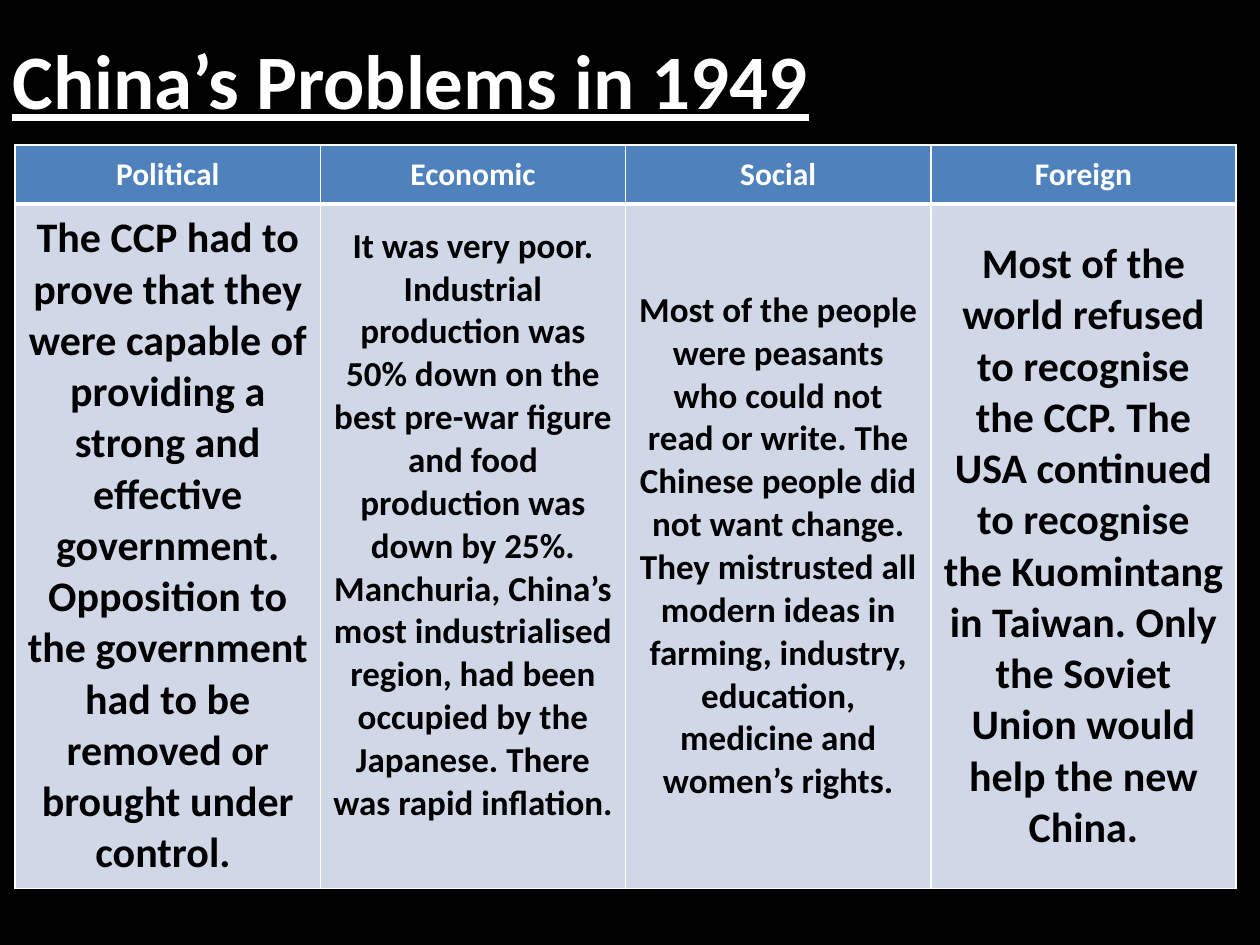
from lxml import etree
from pptx import Presentation
from pptx.dml.color import RGBColor
from pptx.enum.text import MSO_ANCHOR, PP_ALIGN
from pptx.oxml.ns import qn
from pptx.util import Inches, Pt


def color(value):
    return RGBColor.from_string(value)


def format_text(text_frame, size, font_color, alignment):
    paragraph = text_frame.paragraphs[0]
    paragraph.alignment = alignment
    font = paragraph.runs[0].font
    font.name = "Calibri"
    font.size = Pt(size)
    font.bold = True
    font.color.rgb = color(font_color)
    return font


presentation = Presentation()
presentation.slide_width = Inches(10)
presentation.slide_height = Inches(7.5)
slide = presentation.slides.add_slide(presentation.slide_layouts[6])
slide.background.fill.solid()
slide.background.fill.fore_color.rgb = color("000000")

title = slide.shapes.add_textbox(Inches(0), Inches(0), Inches(9.02), Inches(1.25))
title.text_frame.word_wrap = True
title.text_frame.vertical_anchor = MSO_ANCHOR.MIDDLE
title.text_frame.text = "China’s Problems in 1949"
format_text(title.text_frame, 44, "FFFFFF", PP_ALIGN.LEFT).underline = True

problems = [
    ("Political", 24, 0.05,
     "The CCP had to prove that they were capable of providing a strong and "
     "effective government. Opposition to the government had to be removed or "
     "brought under control. "),
    ("Economic", 20, 0.39,
     "It was very poor. Industrial production was 50% down on the best pre-war "
     "figure and food production was down by 25%. Manchuria, China’s most "
     "industrialised region, had been occupied by the Japanese. There was rapid "
     "inflation. "),
    ("Social", 20, 0.05,
     "Most of the people were peasants who could not read or write. The Chinese "
     "people did not want change. They mistrusted all modern ideas in farming, "
     "industry, education, medicine and women’s rights."),
    ("Foreign", 24, 0.05,
     "Most of the world refused to recognise the CCP. The USA continued to "
     "recognise the Kuomintang in Taiwan. Only the Soviet Union would help the "
     "new China."),
]

table_width = Inches(9.69)
table = slide.shapes.add_table(
    2, len(problems), Inches(0.12), Inches(1.15), table_width, Inches(5.9)
).table
table.rows[0].height = Inches(0.47)
table.rows[1].height = Inches(5.43)

for column, (heading, body_size, bottom_margin, body) in enumerate(problems):
    table.columns[column].width = table_width // len(problems)
    styles = [
        (heading, 18, "FFFFFF", "4F81BD", 0.05, "a:lnB"),
        (body, body_size, "000000", "D0D8E8", bottom_margin, "a:lnT"),
    ]
    for row, (text, size, font_color, fill_color, margin, edge) in enumerate(styles):
        cell = table.cell(row, column)
        cell.vertical_anchor = MSO_ANCHOR.MIDDLE
        cell.margin_bottom = Inches(margin)
        cell.fill.solid()
        cell.fill.fore_color.rgb = color(fill_color)
        cell.text_frame.text = text
        format_text(cell.text_frame, size, font_color, PP_ALIGN.CENTER)
        border = etree.Element(qn(edge), w=str(Pt(3)))
        border_fill = etree.SubElement(border, qn("a:solidFill"))
        etree.SubElement(border_fill, qn("a:srgbClr"), val="FFFFFF")
        cell._tc.get_or_add_tcPr().insert(0, border)

presentation.save("out.pptx")
